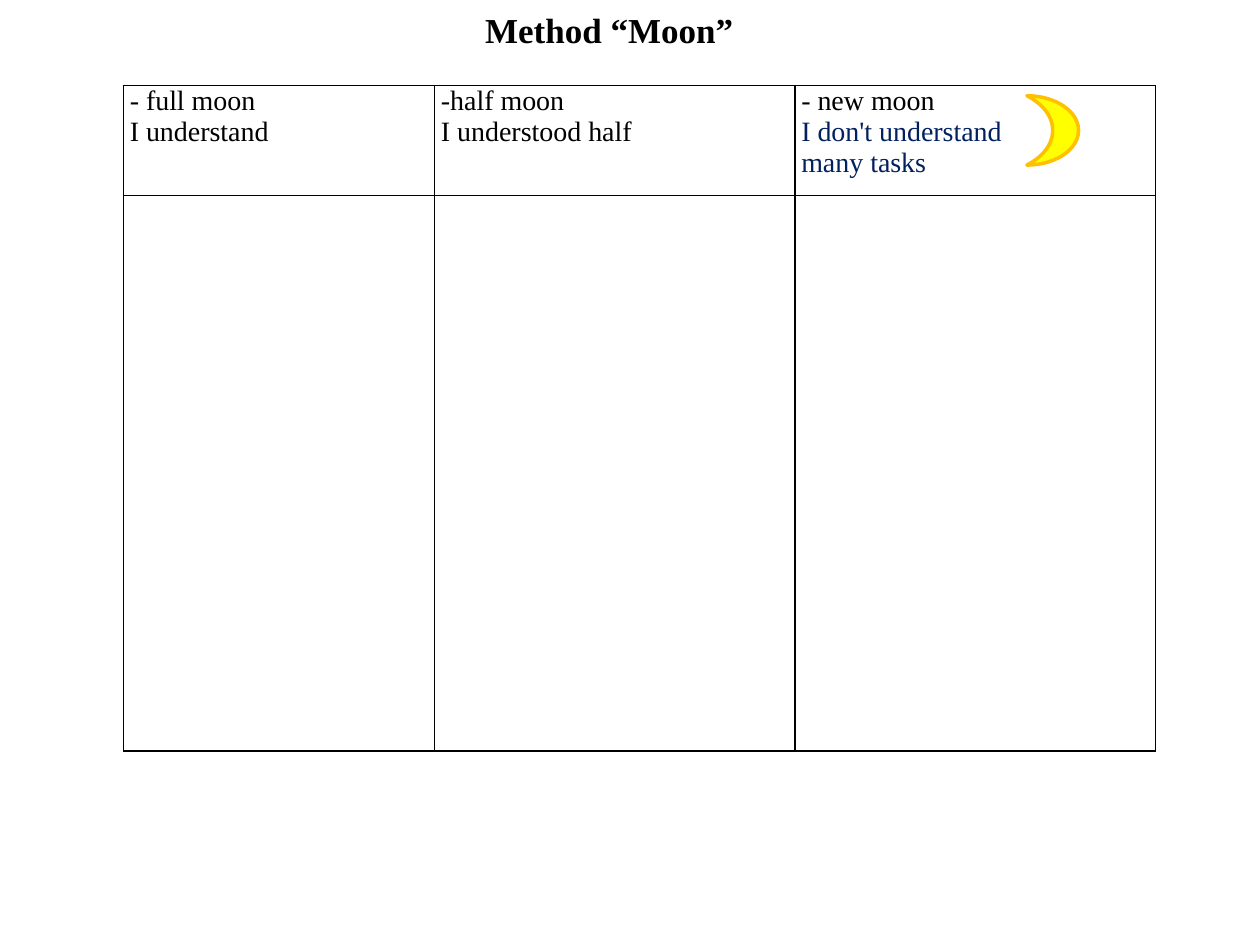
from lxml import etree
from pptx import Presentation
from pptx.dml.color import RGBColor
from pptx.enum.shapes import MSO_SHAPE
from pptx.enum.text import MSO_ANCHOR, PP_ALIGN
from pptx.oxml.ns import qn
from pptx.util import Inches, Pt

FONT = "Times New Roman"
BLACK = RGBColor(0x00, 0x00, 0x00)
NAVY = RGBColor(0x00, 0x20, 0x60)
YELLOW = RGBColor(0xFF, 0xFF, 0x00)
AMBER = RGBColor(0xFF, 0xC0, 0x00)
MOON = MSO_SHAPE.MOON
MIDDLE = MSO_ANCHOR.MIDDLE
CENTER, JUSTIFY = PP_ALIGN.CENTER, PP_ALIGN.JUSTIFY

TITLE_ONLY = 5
COLUMN_WIDTHS = (2.47, 2.86, 2.86)
ROW_HEIGHTS = (0.87, 4.41)
# Each heading is a list of (line, colour)
HEADINGS = (
    [("- full moon", BLACK), ("I understand", BLACK)],
    [("-half moon", BLACK), ("I understood half", BLACK)],
    [("- new moon", BLACK), ("I don't understand", NAVY), ("many tasks", NAVY)],
)


def style_paragraph(paragraph, size, color, alignment, bold=False):
    paragraph.alignment = alignment
    font = paragraph.font
    font.name, font.size, font.bold = FONT, Pt(size), bold
    font.color.rgb = color


def add_title(slide, left, top, width, height):
    title = slide.shapes.title
    title.left, title.top = Inches(left), Inches(top)
    title.width, title.height = Inches(width), Inches(height)
    frame = title.text_frame
    frame.text = "Method “Moon”"
    frame.word_wrap = False
    frame.vertical_anchor = MIDDLE
    style_paragraph(frame.paragraphs[0], 20, BLACK, CENTER, bold=True)


def outline_cell(cell):
    properties = cell._tc.get_or_add_tcPr()
    for side in ("a:lnL", "a:lnR", "a:lnT", "a:lnB"):
        line = etree.SubElement(properties, qn(side), w=str(Pt(1)))
        fill = etree.SubElement(line, qn("a:solidFill"))
        etree.SubElement(fill, qn("a:srgbClr"), val=str(BLACK))


def fill_heading(cell, lines):
    frame = cell.text_frame
    for index, (line, color) in enumerate(lines):
        paragraph = frame.add_paragraph() if index else frame.paragraphs[0]
        paragraph.text = line
        style_paragraph(paragraph, 16, color, JUSTIFY)


def add_moon_table(slide, left, top):
    table = slide.shapes.add_table(
        len(ROW_HEIGHTS), len(COLUMN_WIDTHS), Inches(left), Inches(top),
        Inches(sum(COLUMN_WIDTHS)), Inches(sum(ROW_HEIGHTS))).table
    table.first_row = table.horz_banding = False
    for column, width in zip(table.columns, COLUMN_WIDTHS):
        column.width = Inches(width)
    for row, height in zip(table.rows, ROW_HEIGHTS):
        row.height = Inches(height)
    for cell in table.iter_cells():
        cell.margin_left = cell.margin_right = Inches(0.05)
        cell.margin_top = cell.margin_bottom = 0
        outline_cell(cell)
        cell.fill.background()
    for column, lines in enumerate(HEADINGS):
        fill_heading(table.cell(0, column), lines)


def add_crescent(slide, left, top, width, height):
    crescent = slide.shapes.add_shape(
        MOON, Inches(left), Inches(top), Inches(width), Inches(height))
    crescent.rotation = 180  # horns point left
    crescent.shadow.inherit = False
    crescent.fill.solid()
    crescent.fill.fore_color.rgb = YELLOW
    crescent.line.color.rgb = AMBER
    crescent.line.width = Pt(2)


def main():
    presentation = Presentation()
    presentation.slide_width, presentation.slide_height = Inches(10), Inches(7.5)
    slide = presentation.slides.add_slide(presentation.slide_layouts[TITLE_ONLY])
    add_title(slide, 3.74, 0, 2.19, 0.47)
    add_moon_table(slide, 0.98, 0.68)
    add_crescent(slide, 8.15, 0.76, 0.41, 0.55)
    presentation.save("out.pptx")


if __name__ == "__main__":
    main()
